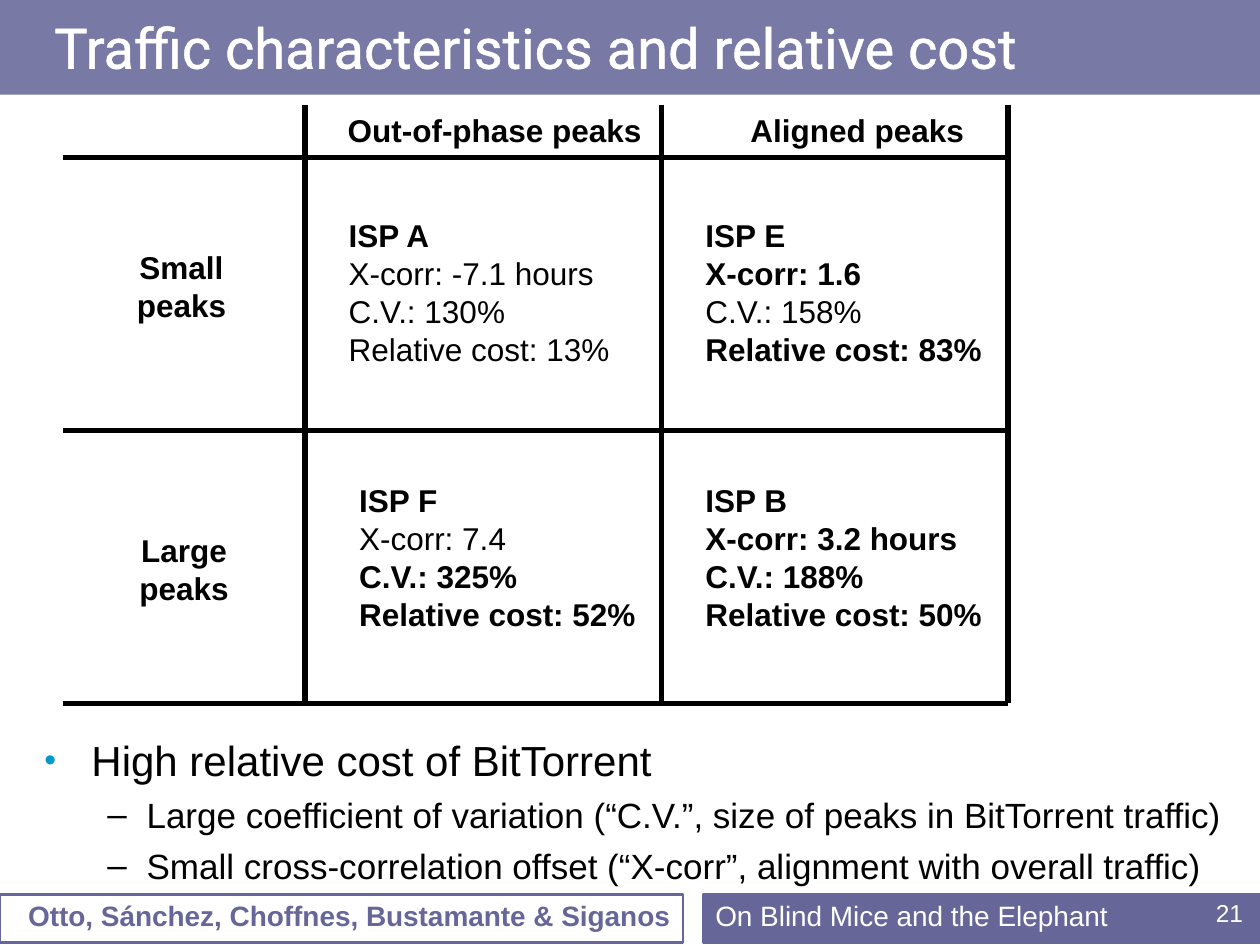
from dataclasses import dataclass

from lxml import etree
from pptx import Presentation
from pptx.dml.color import RGBColor
from pptx.enum.shapes import MSO_CONNECTOR, MSO_SHAPE
from pptx.enum.text import MSO_ANCHOR, MSO_AUTO_SIZE, PP_ALIGN
from pptx.oxml.ns import qn
from pptx.util import Cm, Pt

LEFT, CENTER, RIGHT = PP_ALIGN.LEFT, PP_ALIGN.CENTER, PP_ALIGN.RIGHT
MIDDLE, TOP = MSO_ANCHOR.MIDDLE, MSO_ANCHOR.TOP
FIXED, GROW = MSO_AUTO_SIZE.NONE, MSO_AUTO_SIZE.SHAPE_TO_FIT_TEXT
RECT, LINE = MSO_SHAPE.RECTANGLE, MSO_CONNECTOR.STRAIGHT


@dataclass(frozen=True)
class Theme:
    ink: str = "000000"
    white: str = "FFFFFF"
    brand: str = "666699"
    band: str = "7979A6"
    bullet: str = "0099CC"
    font: str = "Arial"
    head_font: str = "Roboto"
    head: int = 32
    item: int = 24
    sub: int = 20
    cell: int = 18
    foot: int = 16
    page: int = 14


THEME = Theme()


def rgb(code):
    return RGBColor.from_string(code)


def write(para, text, size=THEME.cell, color=THEME.ink, font=THEME.font,
          bold=False, align=LEFT):
    para.alignment = align
    run = para.add_run()
    run.text = text
    face = run.font
    face.name, face.size, face.bold = font, Pt(size), bold
    face.color.rgb = rgb(color)
    return run


def outline(run, color, width):
    """Draw the letter edges in a colour; width is in points."""
    line = etree.Element(qn("a:ln"), w=str(Pt(width)))
    fill = etree.SubElement(line, qn("a:solidFill"))
    etree.SubElement(fill, qn("a:srgbClr"), val=color)
    run._r.get_or_add_rPr().insert(0, line)


def mark(para, char, left, hang, color=None, scale=None):
    """Give a paragraph a bullet with a hanging indent."""
    props = para._p.get_or_add_pPr()
    props.set("marL", str(Cm(left)))
    props.set("indent", str(-Cm(hang)))
    if color:
        tint = etree.SubElement(props, qn("a:buClr"))
        etree.SubElement(tint, qn("a:srgbClr"), val=color)
    if scale:
        etree.SubElement(props, qn("a:buSzPct"), val=str(scale * 1000))
    etree.SubElement(props, qn("a:buChar"), char=char)


class Page:
    """The current slide and its style; all lengths are in centimetres."""

    def __init__(self, slide, theme):
        self.slide, self.theme = slide, theme

    def bar(self, box, fill=None, edge=None):
        shape = self.slide.shapes.add_shape(RECT, *map(Cm, box))
        shape.shadow.inherit = False
        if fill:
            shape.fill.solid()
            shape.fill.fore_color.rgb = rgb(fill)
        else:
            shape.fill.background()
        if edge:
            shape.line.color.rgb = rgb(edge)
            shape.line.width = Pt(1.5)
        else:
            shape.line.fill.background()

    def rule(self, start, end):
        line = self.slide.shapes.add_connector(LINE, *map(Cm, start + end))
        line.line.color.rgb = rgb(self.theme.ink)
        line.line.width = Pt(3)
        etree.SubElement(line.element.spPr, qn("a:effectLst"))

    def text(self, box, rows, wrap=False, **style):
        """Add a text box; each row is a pair of wording and bold flag."""
        frame = self.slide.shapes.add_textbox(*map(Cm, box)).text_frame
        frame.word_wrap = wrap
        frame.auto_size = FIXED if wrap else GROW
        for i, (words, bold) in enumerate(rows):
            para = frame.add_paragraph() if i else frame.paragraphs[0]
            write(para, words, bold=bold, **style)

    def place(self, holder, box, anchor):
        """Move a placeholder to the front and return its text frame."""
        holder.left, holder.top, holder.width, holder.height = map(Cm, box)
        holder.element.getparent().append(holder.element)
        frame = holder.text_frame
        frame.auto_size, frame.vertical_anchor = FIXED, anchor
        frame.word_wrap = True
        return frame

    def title(self, box, words):
        look = self.theme
        frame = self.place(self.slide.shapes.title, box, MIDDLE)
        run = write(frame.paragraphs[0], words, size=look.head,
                    color=look.white, font=look.head_font)
        outline(run, look.white, 1.45)

    def bullets(self, box, items):
        look = self.theme
        frame = self.place(self.slide.placeholders[1], box, TOP)
        for i, (level, words) in enumerate(items):
            para = frame.add_paragraph() if i else frame.paragraphs[0]
            para.level = level
            para.space_before = Pt(5 if i else 0)
            if level:
                mark(para, "–", 2.06, 0.79)
            else:
                mark(para, "•", 0.95, 0.95, look.bullet, 80)
            write(para, words, size=look.sub if level else look.item)


def frame_page(page):
    """Add the title band and the footer."""
    look = page.theme
    page.bar((0, 0, 25.4, 1.91), fill=look.band)
    page.bar((14.17, 18.03, 11.23, 0.97), fill=look.brand, edge=look.brand)
    page.bar((0, 18.03, 13.77, 0.97), edge=look.brand)
    top, tall = 17.98, 1.07
    page.text((0, top, 13.77, tall),
              [("Otto, Sánchez, Choffnes, Bustamante & Siganos", True)],
              wrap=True, size=look.foot, color=look.brand, align=RIGHT)
    page.text((14.17, top, 9.96, tall),
              [("On Blind Mice and the Elephant", False)],
              wrap=True, size=look.foot, color=look.white)
    page.text((24.26, top, 1.14, tall), [("21", False)],
              wrap=True, size=look.page, color=look.white)


def grid(page):
    """Draw the two-by-two comparison of providers."""
    left, right, top, end = 1.27, 20.32, 2.11, 14.18
    for y in (3.18, 8.68, end):
        page.rule((left, y), (right, y))
    for x in (6.15, 13.34, right):
        page.rule((x, top), (x, end))

    for x, wide, name in ((6.76, 6.5, "Out-of-phase peaks"),
                          (14.88, 4.85, "Aligned peaks")):
        page.text((x, top, wide, 1.02), [(name, True)])
    for x, y, name in ((2.49, 4.88, "Small"), (2.54, 10.59, "Large")):
        page.text((x, y, 2.34, 1.8), [(name, True), ("peaks", True)],
                  align=CENTER)

    upper, lower = 4.24, 9.58
    cells = (
        (6.78, upper, 5.82, "ISP A", ("-7.1 hours", False),
         ("130%", False), ("13%", False)),
        (13.97, upper, 6.15, "ISP E", ("1.6", True),
         ("158%", False), ("83%", True)),
        (6.99, lower, 6.15, "ISP F", ("7.4", False),
         ("325%", True), ("52%", True)),
        (13.97, lower, 6.15, "ISP B", ("3.2 hours", True),
         ("188%", True), ("50%", True)),
    )
    labels = ("X-corr", "C.V.", "Relative cost")
    for x, y, wide, name, *facts in cells:
        rows = [(f"{label}: {value}", bold)
                for label, (value, bold) in zip(labels, facts)]
        page.text((x, y, wide, 3.33), [(name, True)] + rows)


def main():
    deck = Presentation()
    deck.slide_width, deck.slide_height = Cm(25.4), Cm(19.05)
    page = Page(deck.slides.add_slide(deck.slide_layouts[1]), THEME)
    frame_page(page)
    page.title((0.84, 0.2, 23.7, 1.47),
               "Traffic characteristics and relative cost")
    page.bullets((0.64, 14.68, 24.56, 2.74), (
        (0, "High relative cost of BitTorrent"),
        (1, "Large coefficient of variation (“C.V.”, "
            "size of peaks in BitTorrent traffic)"),
        (1, "Small cross-correlation offset (“X-corr”, "
            "alignment with overall traffic)"),
    ))
    grid(page)
    deck.save("out.pptx")


if __name__ == "__main__":
    main()
